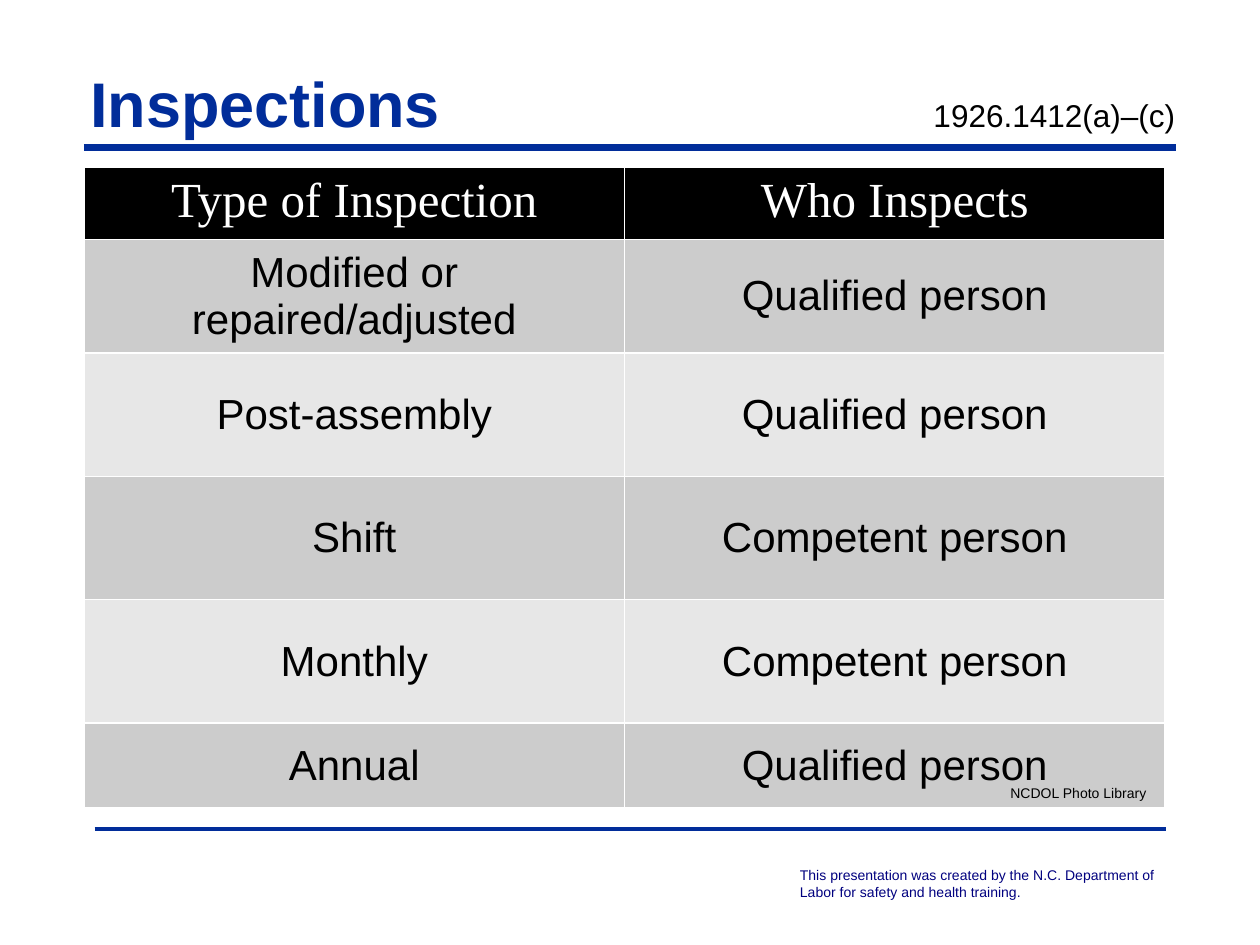
from lxml.etree import SubElement
from pptx import Presentation
from pptx.dml.color import RGBColor
from pptx.enum.shapes import MSO_CONNECTOR as Conn
from pptx.enum.text import MSO_ANCHOR as Anchor, MSO_AUTO_SIZE as Fit, PP_ALIGN as Align
from pptx.oxml.ns import qn
from pptx.util import Inches, Pt

WIDE, HIGH = 10, 7.5
BLUE, NAVY, BLACK, WHITE = "012D9A", "00007F", "000000", "FFFFFF"
BANDS = ("CCCCCC", "E7E7E7")
ROWS = [
    ("Type of Inspection", "Who Inspects"),
    ("Modified or repaired/adjusted", "Qualified person"),
    ("Post-assembly", "Qualified person"),
    ("Shift", "Competent person"),
    ("Monthly", "Competent person"),
    ("Annual", "Qualified person"),
]
HEIGHTS = (0.57, 0.9, 0.98, 0.98, 0.98, 0.67)


def color(code):
    return RGBColor.from_string(code)


def style(font, size, code, name="Arial", bold=False):
    font.name, font.size, font.bold = name, Pt(size), bold
    font.color.rgb = color(code)


def add_rule(slide, left, top, width, weight):
    x, y = Inches(left), Inches(top)
    rule = slide.shapes.add_connector(Conn.STRAIGHT, x, y, x + Inches(width), y)
    rule.line.color.rgb = color(BLUE)
    rule.line.width = Pt(weight)
    SubElement(rule._element.spPr, qn("a:effectLst"))


def add_title(slide, box, topic, code):
    """Topic at the left edge and regulation number at a right tab."""
    title = slide.shapes.title
    title.left, title.top, title.width, title.height = map(Inches, box)
    frame = title.text_frame
    frame.auto_size, frame.word_wrap = Fit.NONE, True
    frame.vertical_anchor = Anchor.BOTTOM
    frame.margin_left = frame.margin_right = Inches(0.05)
    frame.margin_top = frame.margin_bottom = 0
    para = frame.paragraphs[0]
    para.alignment = Align.LEFT
    tabs = SubElement(para._p.get_or_add_pPr(), qn("a:tabLst"))
    SubElement(tabs, qn("a:tab"), pos=str(Inches(box[2] - 0.14)), algn="r")
    for text, size, ink, bold in ((topic + "\t", 36, BLUE, True), (code, 18, BLACK, False)):
        run = para.add_run()
        run.text = text
        style(run.font, size, ink, bold=bold)


def add_note(slide, box, text, ink):
    frame = slide.shapes.add_textbox(*map(Inches, box)).text_frame
    frame.word_wrap = True
    frame.text = text
    style(frame.paragraphs[0].font, 8, ink)


def add_edges(cell):
    props = cell._tc.get_or_add_tcPr()
    for i, side in enumerate(("lnL", "lnR", "lnT", "lnB")):
        edge = props.makeelement(qn(f"a:{side}"), {"w": str(Pt(1))})
        fill = SubElement(edge, qn("a:solidFill"))
        SubElement(fill, qn("a:srgbClr"), val=WHITE)
        props.insert(i, edge)


def add_grid(slide, box):
    table = slide.shapes.add_table(len(ROWS), len(ROWS[0]), *map(Inches, box)).table
    for r, (texts, height) in enumerate(zip(ROWS, HEIGHTS)):
        table.rows[r].height = Inches(height)
        head = r == 0
        for c, text in enumerate(texts):
            cell = table.cell(r, c)
            cell.text = text
            cell.vertical_anchor = Anchor.TOP if head else Anchor.MIDDLE
            cell.fill.solid()
            cell.fill.fore_color.rgb = color(BLACK if head else BANDS[(r - 1) % 2])
            add_edges(cell)
            para = cell.text_frame.paragraphs[0]
            para.alignment = Align.CENTER
            if head:
                style(para.font, 28, WHITE, "Times New Roman")
            else:
                style(para.font, 24, BLACK)


def main():
    deck = Presentation()
    deck.slide_width, deck.slide_height = Inches(WIDE), Inches(HIGH)
    slide = deck.slides.add_slide(deck.slide_layouts[5])
    edge = WIDE / 15
    add_rule(slide, edge, 1.17, WIDE - 2 * edge, 4)
    add_rule(slide, 0.75, 6.58, WIDE - 1.5, 2)
    add_note(slide, (6.25, 6.83, 3.25, 0.37),
             "This presentation was created by the N.C. Department of Labor "
             "for safety and health training.", NAVY)
    add_grid(slide, (edge, 1.33, 8.58, sum(HEIGHTS)))
    add_title(slide, (edge, 0.5, 8.75, 0.61), "Inspections", "1926.1412(a)–(c)")
    add_note(slide, (7.92, 6.18, 2.75, 0.24), "NCDOL Photo Library", BLACK)
    deck.save("out.pptx")


if __name__ == "__main__":
    main()
